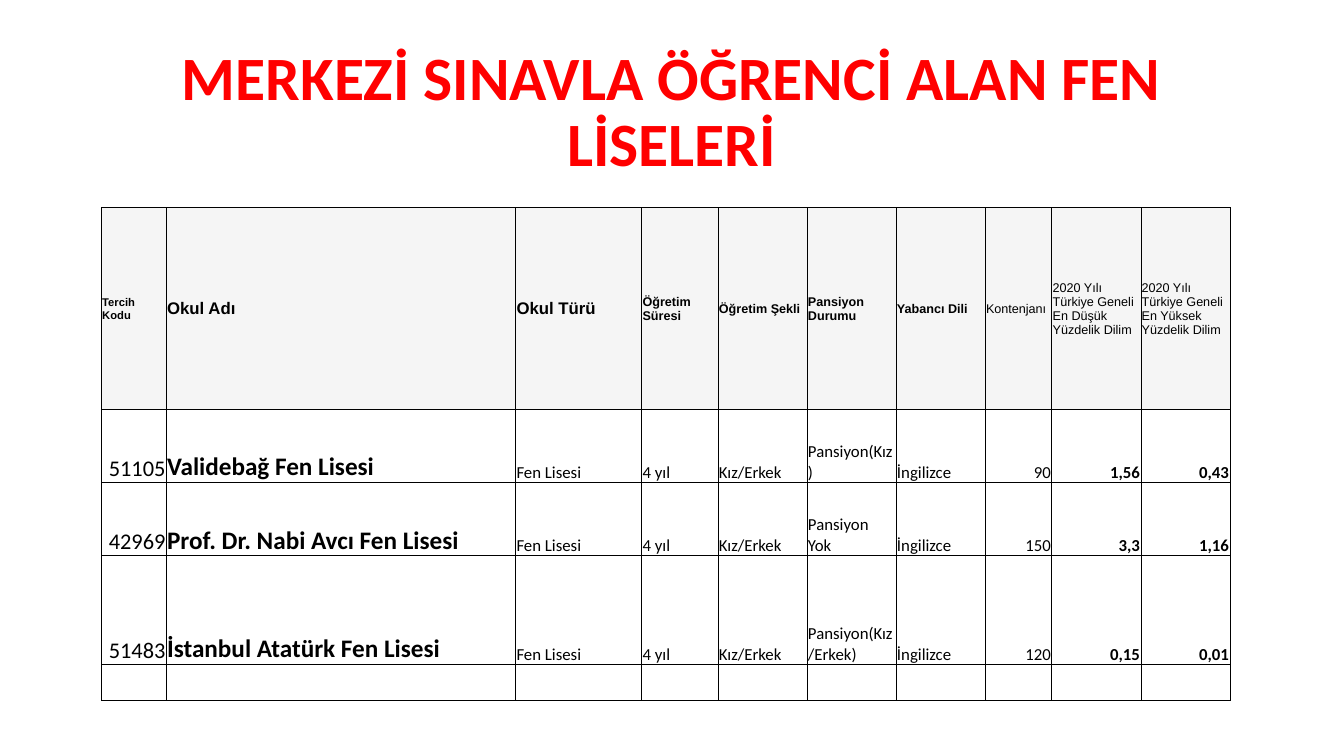
"""Build a slide with a table of science high schools that admit by central exam."""
from lxml.etree import SubElement
from pptx import Presentation
from pptx.dml.color import RGBColor
from pptx.enum.text import MSO_ANCHOR as Anchor, MSO_AUTO_SIZE as AutoSize, PP_ALIGN as Align
from pptx.oxml.ns import qn
from pptx.util import Pt

TITLE = "MERKEZİ SINAVLA ÖĞRENCİ ALAN FEN LİSELERİ"
COLORS = {"title": "FF0000", "text": "000000", "border": "000000", "header": "F5F5F5"}

# header, width, header size, header bold, body size, body bold, body alignment
COLUMNS = [
    ("Tercih Kodu", 46.4, 8, True, 16, False, Align.RIGHT),
    ("Okul Adı", 249.6, 12, True, 18, True, Align.LEFT),
    ("Okul Türü", 90, 12, True, 12, False, Align.LEFT),
    ("Öğretim Süresi", 54.6, 9, True, 12, False, Align.LEFT),
    ("Öğretim Şekli", 63.6, 9, True, 12, False, Align.LEFT),
    ("Pansiyon Durumu", 63.6, 9, True, 12, False, Align.LEFT),
    ("Yabancı Dili", 63.6, 9, True, 12, False, Align.LEFT),
    ("Kontenjanı", 47.6, 9, False, 12, False, Align.RIGHT),
    ("2020 Yılı Türkiye Geneli En Düşük Yüzdelik Dilim", 63.6, 9, False, 12, True, Align.RIGHT),
    ("2020 Yılı Türkiye Geneli En Yüksek Yüzdelik Dilim", 63.6, 9, False, 12, True, Align.RIGHT),
]
COMMON = ("Fen Lisesi", "4 yıl", "Kız/Erkek")
SCHOOLS = [
    ("51105", "Validebağ Fen Lisesi", *COMMON, "Pansiyon(Kız)", "İngilizce", "90", "1,56", "0,43"),
    ("42969", "Prof. Dr. Nabi Avcı Fen Lisesi", *COMMON, "Pansiyon Yok", "İngilizce", "150", "3,3", "1,16"),
    ("51483", "İstanbul Atatürk Fen Lisesi", *COMMON, "Pansiyon(Kız/Erkek)", "İngilizce", "120", "0,15", "0,01"),
]
ROW_HEIGHTS = [144.2, 52.3, 52.3, 77.8, 25.8]


def format_text(frame, text, font_name, size, bold, color, align):
    frame.text = text
    para = frame.paragraphs[0]
    para.alignment = align
    for span in para.runs:
        span.font.name = font_name
        span.font.size = Pt(size)
        span.font.bold = bold
        span.font.color.rgb = RGBColor.from_string(COLORS[color])


def add_borders(cell):
    properties = cell._tc.get_or_add_tcPr()
    for side in ("lnL", "lnR", "lnT", "lnB"):
        line = SubElement(properties, qn(f"a:{side}"), w=str(Pt(0.5)))
        fill = SubElement(line, qn("a:solidFill"))
        SubElement(fill, qn("a:srgbClr"), val=COLORS["border"])


def add_title(slide):
    title = slide.shapes.title
    title.left, title.top, title.width, title.height = Pt(66), Pt(28.75), Pt(828), Pt(104.4)
    frame = title.text_frame
    frame.word_wrap = True
    frame.auto_size = AutoSize.NONE
    frame.vertical_anchor = Anchor.MIDDLE
    format_text(frame, TITLE, "Calibri", 44, True, "title", Align.CENTER)
    frame.paragraphs[0].line_spacing = 0.9


def add_school_table(slide):
    widths = [column[1] for column in COLUMNS]
    table = slide.shapes.add_table(
        len(ROW_HEIGHTS), len(COLUMNS), Pt(72.4), Pt(148.2), Pt(sum(widths)), Pt(sum(ROW_HEIGHTS))
    ).table
    table.first_row = table.horz_banding = False
    for column, width in zip(table.columns, widths):
        column.width = Pt(width)
    for row, height in zip(table.rows, ROW_HEIGHTS):
        row.height = Pt(height)

    headers = [column[0] for column in COLUMNS]
    content = [headers, *SCHOOLS, [""] * len(COLUMNS)]
    for row_index, texts in enumerate(content):
        is_header = row_index == 0
        for column_index, text in enumerate(texts):
            _, _, head_size, head_bold, size, bold, align = COLUMNS[column_index]
            cell = table.cell(row_index, column_index)
            cell.margin_left = cell.margin_right = cell.margin_top = Pt(0.6)
            cell.margin_bottom = 0
            add_borders(cell)
            if is_header:
                cell.vertical_anchor = Anchor.MIDDLE
                cell.fill.solid()
                cell.fill.fore_color.rgb = RGBColor.from_string(COLORS["header"])
                format_text(cell.text_frame, text, "Arial", head_size, head_bold, "text", Align.LEFT)
            else:
                cell.vertical_anchor = Anchor.BOTTOM
                cell.fill.background()
                format_text(cell.text_frame, text, "Calibri", size, bold, "text", align)


def main():
    deck = Presentation()
    deck.slide_width, deck.slide_height = Pt(960), Pt(540)
    slide = deck.slides.add_slide(deck.slide_layouts[5])
    add_title(slide)
    add_school_table(slide)
    deck.save("out.pptx")


if __name__ == "__main__":
    main()
